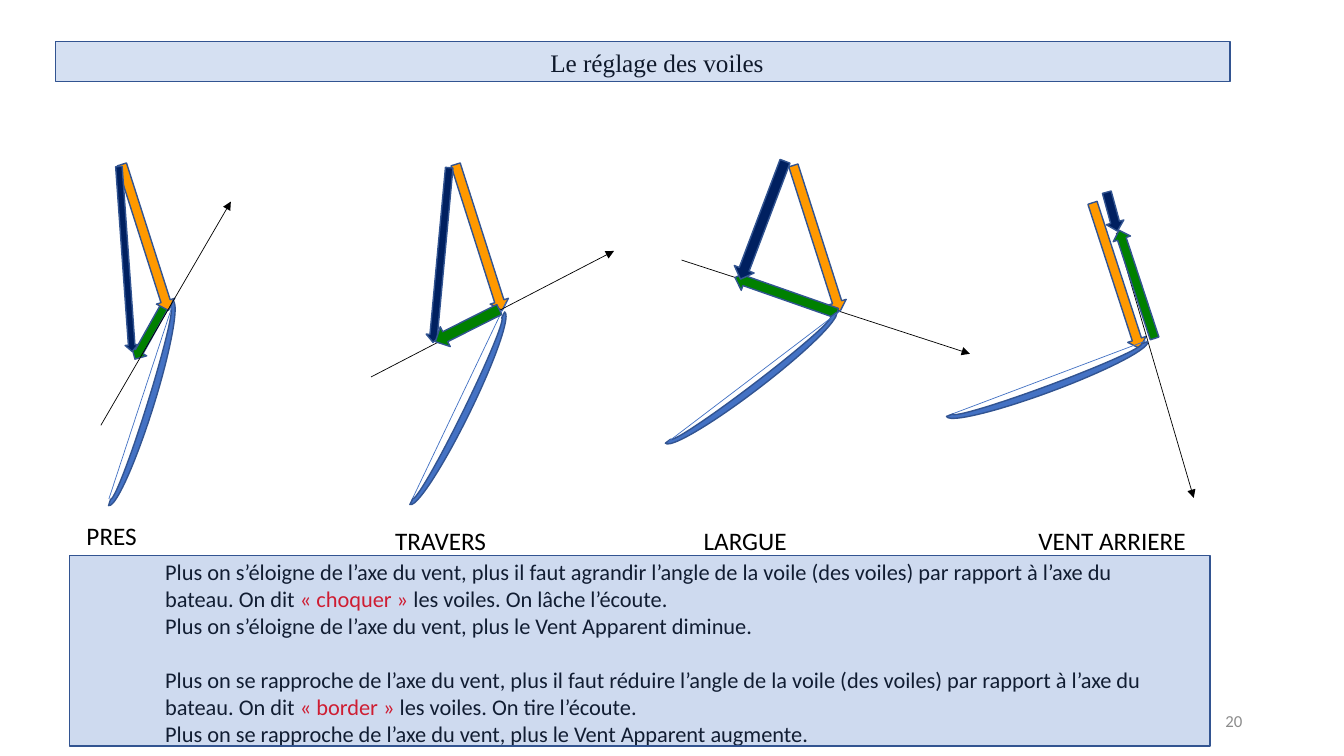
from lxml.etree import SubElement
from pptx import Presentation
from pptx.dml.color import RGBColor
from pptx.enum.shapes import MSO_CONNECTOR, MSO_SHAPE
from pptx.enum.text import MSO_ANCHOR, PP_ALIGN
from pptx.oxml.ns import qn
from pptx.util import Inches, Pt

WIDTH, HEIGHT = 13.33, 7.5
COLS, ROWS = 1333, 750
COLORS = {"sail": "4472C4", "edge": "325491", "true": "FF9900", "speed": "008000",
          "apparent": "002060", "text": "000000", "accent": "FF0000", "number": "8C8C8C"}

TITLE = "Le réglage des voiles"
TITLE_BAR = (55, 41, 1165, 40)
RULES_BAR = (69, 551, 1131, 189)
RULES = [
    ["Plus on s’éloigne de l’axe du vent, plus il faut agrandir l’angle de la voile (des voiles) par rapport à l’axe du"],
    ["bateau. On dit ", "« choquer » ", "les voiles. On lâche l’écoute."],
    ["Plus on s’éloigne de l’axe du vent, plus le Vent Apparent diminue."],
    ["Plus on se rapproche de l’axe du vent, plus il faut réduire l’angle de la voile (des voiles) par rapport à l’axe du"],
    ["bateau. On dit ", "« border » ", "les voiles. On tire l’écoute."],
    ["Plus on se rapproche de l’axe du vent, plus le Vent Apparent augmente."],
]
SECOND_RULE = 3

TRUE_SIZE = (152, 19)
SAIL_SIZE = (213, 26)
PARTS = {
    "true": (MSO_SHAPE.RIGHT_ARROW, "true"),
    "speed": (MSO_SHAPE.RIGHT_ARROW, "speed"),
    "apparent": (MSO_SHAPE.DOWN_ARROW, "apparent"),
    "sail": (MSO_SHAPE.BLOCK_ARC, "sail"),
}
HEADINGS = [
    {"label": ("PRES", 76, 511, 70, False), "parts": [
        ("speed", (117, 319, 66, 17), 119.2),
        ("true", (68, 226, *TRUE_SIZE), 72.3),
        ("apparent", (118, 165, 13, 184), 355.9),
        ("sail", (33, 387, *SAIL_SIZE), 107.4),
        ("chord", (172, 300, 108, 495)),
        ("course", (100, 422, 229, 200))]},
    {"label": ("TRAVERS", 382, 516, 262, True), "parts": [
        ("true", (399, 226, *TRUE_SIZE), 72.3),
        ("apparent", (430, 166, 15, 174), 5.3),
        ("chord", (502, 300, 408, 497)),
        ("course", (368, 374, 609, 249)),
        ("sail", (347, 392, *SAIL_SIZE), 116.2),
        ("speed", (428, 312, 71, 22), 153.3)]},
    {"label": ("LARGUE", 688, 516, 262, True), "parts": [
        ("true", (734, 227, *TRUE_SIZE), 72.3),
        ("course", (676, 258, 962, 351)),
        ("speed", (726, 283, 107, 20), 199.3),
        ("apparent", (746, 156, 21, 125), 20.7),
        ("sail", (638, 362, *SAIL_SIZE), 142.6),
        ("chord", (834, 308, 663, 438))]},
    {"label": ("VENT ARRIERE", 1020, 516, 228, True), "parts": [
        ("true", (1031, 264, *TRUE_SIZE), 72),
        ("course", (1107, 231, 1184, 494)),
        ("speed", (1071, 273, 113, 18), 251.8),
        ("apparent", (1094, 190, 18, 40), 344.7),
        ("chord", (1137, 338, 941, 412)),
        ("sail", (932, 363, *SAIL_SIZE), 159.6)]},
]

prs = Presentation()
prs.slide_width, prs.slide_height = Inches(WIDTH), Inches(HEIGHT)
slide = prs.slides.add_slide(prs.slide_layouts[6])


def place(box):
    col, row = Inches(WIDTH) / COLS, Inches(HEIGHT) / ROWS
    return [round(v * unit) for v, unit in zip(box, (col, row, col, row))]


def rgb(name):
    return RGBColor.from_string(COLORS[name])


def add_text(paragraphs, box, size=18, font="Calibri", color="text", wrap=True,
             align=PP_ALIGN.LEFT, anchor=MSO_ANCHOR.TOP, gap_at=None):
    tf = slide.shapes.add_textbox(*place(box)).text_frame
    tf.word_wrap, tf.vertical_anchor = wrap, anchor
    for i, runs in enumerate(paragraphs):
        p = tf.add_paragraph() if i else tf.paragraphs[0]
        p.alignment = align
        if i == gap_at:
            p.space_before = Pt(size * 1.22)
        for text in runs:
            r = p.add_run()
            r.text = text
            r.font.size, r.font.name = Pt(size), font
            r.font.color.rgb = rgb("accent" if text.startswith("«") else color)


def add_shape(kind, box, fill, rotation=0, opacity=100):
    sp = slide.shapes.add_shape(kind, *place(box))
    sp.shadow.inherit = False
    sp.rotation = rotation
    sp.fill.solid()
    sp.fill.fore_color.rgb = rgb(fill)
    sp.line.color.rgb = rgb("edge")
    sp.line.width = Pt(1)
    if opacity < 100:
        color = sp.fill._xPr.find(qn("a:solidFill"))[0]
        SubElement(color, qn("a:alpha")).set("val", str(opacity * 1000))


def add_line(ends, color, arrow=False):
    cx = slide.shapes.add_connector(MSO_CONNECTOR.STRAIGHT, *place(ends))
    cx.line.color.rgb = rgb(color)
    cx.line.width = Pt(0.5)
    if arrow:
        SubElement(cx.line._get_or_add_ln(), qn("a:tailEnd")).set("type", "triangle")
    SubElement(cx._element.spPr, qn("a:effectLst"))


add_text([[TITLE]], (536, 42, 234, 40), font="Times New Roman", wrap=False)
add_shape(MSO_SHAPE.RECTANGLE, TITLE_BAR, "sail", opacity=22)

for heading in HEADINGS:
    for name, box, *rotation in heading["parts"]:
        if name in PARTS:
            kind, fill = PARTS[name]
            add_shape(kind, box, fill, *rotation)
        else:
            is_course = name == "course"
            add_line(box, "text" if is_course else "sail", arrow=is_course)
    label, left, top, width, wrap = heading["label"]
    add_text([[label]], (left, top, width, 40), wrap=wrap)

add_text(RULES, (154, 549, 1000, 199), size=16, wrap=False, gap_at=SECOND_RULE)
add_shape(MSO_SHAPE.RECTANGLE, RULES_BAR, "sail", opacity=26)
add_text([["20"]], (942, 695, 300, 40), size=12, color="number",
         align=PP_ALIGN.RIGHT, anchor=MSO_ANCHOR.MIDDLE)

prs.save("out.pptx")
